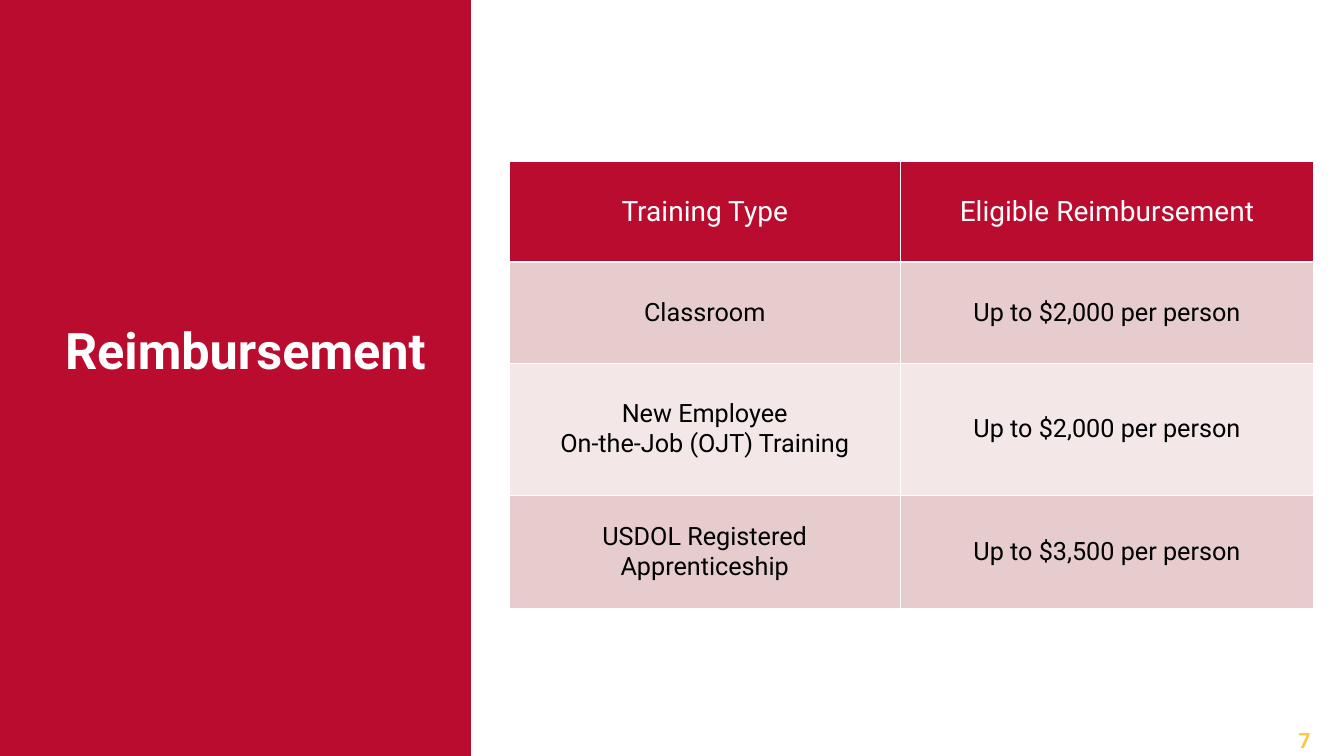
import pptx
import pptx.dml.color
import pptx.enum.shapes
import pptx.enum.text
import pptx.oxml
import pptx.oxml.ns
import pptx.util

Inches = pptx.util.Inches
Pt = pptx.util.Pt

RED = "BA0C2F"
WHITE = "FFFFFF"
BLACK = "000000"
GOLD = "FAC93D"
ROSE = "E7CCCD"
BLUSH = "F3E7E8"

ROWS = [
    ("Training Type", "Eligible Reimbursement"),
    ("Classroom", "Up to $2,000 per person"),
    ("New Employee\nOn-the-Job (OJT) Training", "Up to $2,000 per person"),
    ("USDOL Registered Apprenticeship", "Up to $3,500 per person"),
]
COLUMN_WIDTHS = (3.88, 4.1)
ROW_HEIGHTS = (1, 1, 1.31, 1.13)


def color(value):
    return pptx.dml.color.RGBColor.from_string(value)


class SlideBuilder:
    font_name = "Roboto"

    def __init__(self, page):
        self.page = page

    def set_text(self, frame, text, size, ink, bold=False):
        """Fill a text frame with centred paragraphs, one per line of text."""
        frame.text = text
        for para in frame.paragraphs:
            para.alignment = pptx.enum.text.PP_ALIGN.CENTER
            para.font.name = self.font_name
            para.font.size = Pt(size)
            para.font.bold = bold
            para.font.color.rgb = color(ink)

    def panel(self, left, top, width, height, fill):
        box = self.page.shapes.add_shape(
            pptx.enum.shapes.MSO_SHAPE.RECTANGLE,
            Inches(left), Inches(top), Inches(width), Inches(height))
        box.shadow.inherit = False
        box.fill.solid()
        box.fill.fore_color.rgb = color(fill)
        box.line.fill.background()
        # Behind the title placeholder
        self.page.shapes.title.element.addprevious(box.element)

    def title(self, left, top, width, height, text):
        box = self.page.shapes.title
        box.left, box.top = Inches(left), Inches(top)
        box.width, box.height = Inches(width), Inches(height)
        frame = box.text_frame
        frame.word_wrap = True
        frame.auto_size = pptx.enum.text.MSO_AUTO_SIZE.NONE
        frame.vertical_anchor = pptx.enum.text.MSO_ANCHOR.MIDDLE
        self.set_text(frame, text, 36, WHITE, bold=True)

    def page_number(self, left, top, width, height, text):
        box = self.page.shapes.add_textbox(
            Inches(left), Inches(top), Inches(width), Inches(height))
        frame = box.text_frame
        frame.word_wrap = False
        frame.vertical_anchor = pptx.enum.text.MSO_ANCHOR.MIDDLE
        frame.margin_left = frame.margin_right = Inches(0.08)
        frame.margin_top = frame.margin_bottom = Inches(0.08)
        self.set_text(frame, text, 15, GOLD, bold=True)

    def border(self, cell, side, width):
        properties = cell._tc.get_or_add_tcPr()
        properties.append(pptx.oxml.parse_xml(
            f'<a:{side} {pptx.oxml.ns.nsdecls("a")} w="{Pt(width)}">'
            f'<a:solidFill><a:srgbClr val="{WHITE}"/></a:solidFill></a:{side}>'))

    def table(self, left, top, rows, widths, heights):
        grid = self.page.shapes.add_table(
            len(rows), len(widths), Inches(left), Inches(top),
            Inches(sum(widths)), Inches(sum(heights))).table
        for column, width in zip(grid.columns, widths):
            column.width = Inches(width)
        for index, (texts, height) in enumerate(zip(rows, heights)):
            grid.rows[index].height = Inches(height)
            if index == 0:
                fill, ink, size = RED, WHITE, 20
            else:
                fill, ink, size = (ROSE if index % 2 else BLUSH), BLACK, 18
            for cell, text in zip(grid.rows[index].cells, texts):
                cell.vertical_anchor = pptx.enum.text.MSO_ANCHOR.MIDDLE
                self.set_text(cell.text_frame, text, size, ink)
                for side in ("lnL", "lnR", "lnT", "lnB"):
                    below_header = (index, side) in ((0, "lnB"), (1, "lnT"))
                    self.border(cell, side, 1.36 if below_header else 0.5)
                cell.fill.solid()
                cell.fill.fore_color.rgb = color(fill)


def main():
    deck = pptx.Presentation()
    deck.slide_width, deck.slide_height = Inches(13.33), Inches(7.5)
    title_only = deck.slide_layouts[5]
    slide = SlideBuilder(deck.slides.add_slide(title_only))
    slide.panel(-0.01, 0, 4.68, 7.5, RED)
    slide.title(0.46, 0.88, 3.95, 5.17, "Reimbursement")
    slide.page_number(12.8, 7.22, 0.23, 0.24, "7")
    slide.table(5.05, 1.6, ROWS, COLUMN_WIDTHS, ROW_HEIGHTS)
    deck.save("out.pptx")


if __name__ == "__main__":
    main()
